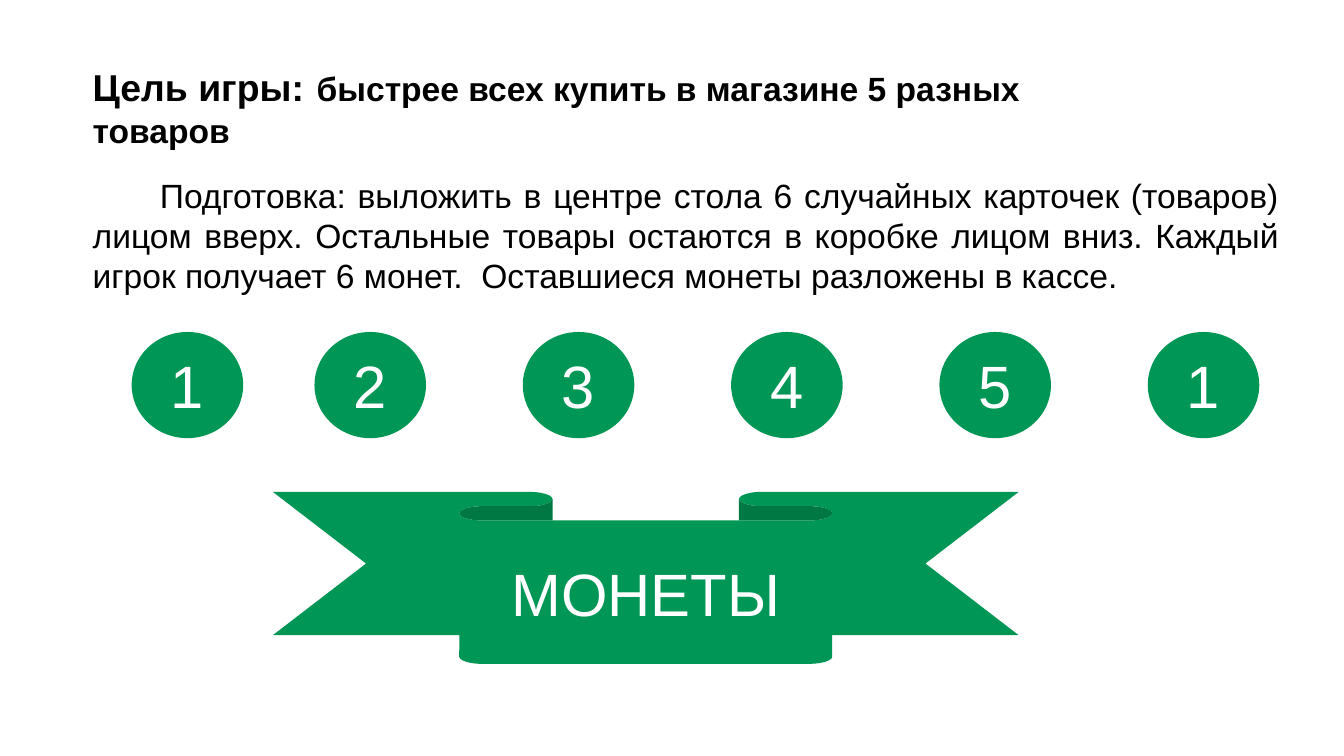
import pptx
import pptx.util
import pptx.dml.color
import pptx.enum.shapes
import pptx.enum.text

Inches = pptx.util.Inches
MSO_SHAPE = pptx.enum.shapes.MSO_SHAPE
PP_ALIGN = pptx.enum.text.PP_ALIGN
MSO_ANCHOR = pptx.enum.text.MSO_ANCHOR

GREEN = pptx.dml.color.RGBColor(0x00, 0x96, 0x55)
WHITE = pptx.dml.color.RGBColor(0xFF, 0xFF, 0xFF)
BLACK = pptx.dml.color.RGBColor(0x00, 0x00, 0x00)

SLIDE_WIDTH = 10
SLIDE_HEIGHT = SLIDE_WIDTH * 9 / 16
MARGIN = 0.69
COIN_WIDTH, COIN_HEIGHT = 0.83, 0.79
COIN_TOP = 2.47
FIRST_COIN_LEFT = 0.98
SECOND_COIN_LEFT = 2.34
COIN_STEP = 1.55

GOAL = [
    ("Цель игры:", 20),
    (" ", 24),
    ("быстрее всех купить в магазине 5 разных товаров", 18),
]
PREPARATION = (
    "Подготовка: выложить в центре стола 6 случайных карточек (товаров) "
    "лицом вверх. Остальные товары остаются в коробке лицом вниз. Каждый "
    "игрок получает 6 монет.  Оставшиеся монеты разложены в кассе. "
)
COINS = ["1", "2", "3", "4", "5", "1"]


def style_run(run, size, color, bold=False):
    run.font.name = "Arial"
    run.font.size = pptx.util.Pt(size)
    run.font.bold = bold
    run.font.color.rgb = color


def prepare_frame(frame, anchor):
    frame.word_wrap = True
    frame.vertical_anchor = anchor
    frame.margin_left = frame.margin_right = 0
    frame.margin_top = frame.margin_bottom = 0


def add_text(slide, box, pieces, bold=False):
    frame = slide.shapes.add_textbox(*map(Inches, box)).text_frame
    prepare_frame(frame, MSO_ANCHOR.TOP)
    paragraph = frame.paragraphs[0]
    for words, size in pieces:
        run = paragraph.add_run()
        run.text = words
        style_run(run, size, BLACK, bold)
    return paragraph


def add_green_shape(slide, kind, box, label):
    shape = slide.shapes.add_shape(kind, *map(Inches, box))
    shape.shadow.inherit = False
    shape.fill.solid()
    shape.fill.fore_color.rgb = GREEN
    shape.line.fill.background()
    prepare_frame(shape.text_frame, MSO_ANCHOR.MIDDLE)
    paragraph = shape.text_frame.paragraphs[0]
    paragraph.text = label
    paragraph.alignment = PP_ALIGN.CENTER
    style_run(paragraph.runs[0], 32, WHITE)


def add_preparation(slide):
    box = (MARGIN, 1.3, 8.83, 3.81)
    preparation = add_text(slide, box, [(PREPARATION, 18)])
    preparation.alignment = PP_ALIGN.JUSTIFY
    preparation.space_after = pptx.util.Pt(6)
    properties = preparation._p.get_or_add_pPr()
    properties.set("marL", "0")
    properties.set("indent", str(Inches(0.5)))


def add_coins(slide):
    lefts = [FIRST_COIN_LEFT] + [
        SECOND_COIN_LEFT + COIN_STEP * column for column in range(len(COINS) - 1)
    ]
    for left, value in zip(lefts, COINS):
        box = (left, COIN_TOP, COIN_WIDTH, COIN_HEIGHT)
        add_green_shape(slide, MSO_SHAPE.OVAL, box, value)


def main():
    deck = pptx.Presentation()
    deck.slide_width = Inches(SLIDE_WIDTH)
    deck.slide_height = Inches(SLIDE_HEIGHT)
    slide = deck.slides.add_slide(deck.slide_layouts[6])
    add_text(slide, (MARGIN, 0.42, 7.7, 0.75), GOAL, bold=True)
    add_preparation(slide)
    add_coins(slide)
    add_green_shape(slide, MSO_SHAPE.DOWN_RIBBON, (2.03, 3.66, 5.55, 1.28), "МОНЕТЫ")
    deck.save("out.pptx")


if __name__ == "__main__":
    main()
